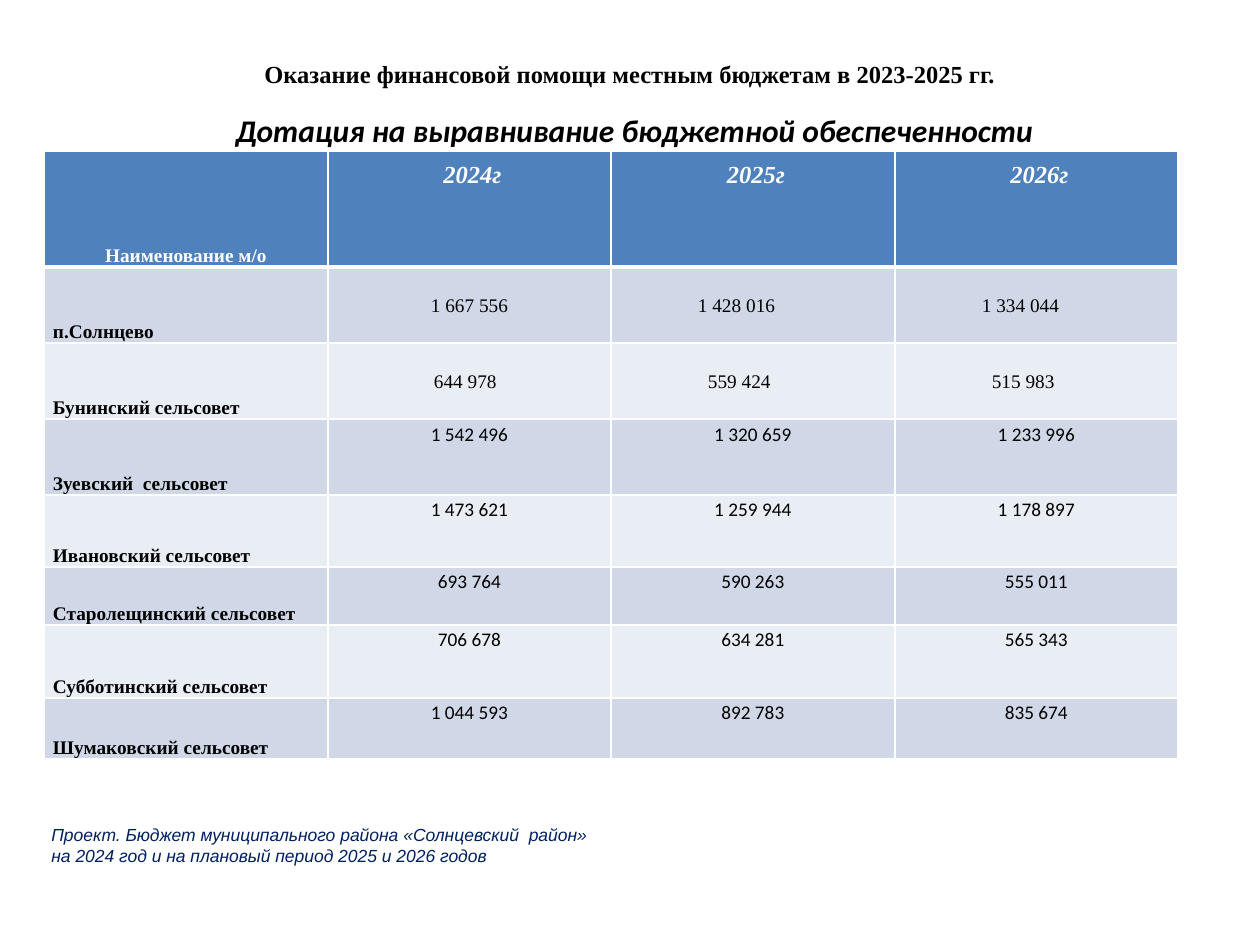
from lxml.etree import SubElement as Sub
from pptx import Presentation
from pptx.dml.color import RGBColor as Rgb
from pptx.enum.text import MSO_ANCHOR as Anchor, MSO_AUTO_SIZE as Auto, PP_ALIGN as Align
from pptx.oxml.ns import qn
from pptx.util import Pt

PX = 914400 // 126
SERIF, SANS, ARIAL = "Times New Roman", "Calibri", "Arial"
COLORS = {"white": "FFFFFF", "black": "000000", "navy": "002060",
          "head": "4F81BD", "odd": "D0D8E8", "even": "E9EDF4"}

# Content
TITLE = "Оказание финансовой помощи местным бюджетам в 2023-2025 гг."
SUB = "Дотация на выравнивание бюджетной обеспеченности"
NOTE = ["Проект. Бюджет муниципального района «Солнцевский  район»",
        "на 2024 год и на плановый период 2025 и 2026 годов"]
HEAD = ["Наименование м/о", " 2024г", " 2025г", " 2026г"]
ROWS = [
    ["п.Солнцево", "1 667 556", "1 428 016", "1 334 044"],
    ["Бунинский сельсовет", "644 978", "559 424", "515 983"],
    ["Зуевский  сельсовет", "1 542 496", "1 320 659", "1 233 996"],
    ["Ивановский сельсовет", "1 473 621", "1 259 944", "1 178 897"],
    ["Старолещинский сельсовет", "693 764", "590 263", "555 011"],
    ["Субботинский сельсовет", "706 678", "634 281", "565 343"],
    ["Шумаковский сельсовет", "1 044 593", "892 783", "835 674"],
]
WIDTHS = [284, 283, 284, 283]
HEIGHTS = [116, 76, 76, 76, 72, 58, 73, 61]
# Left insets of the values in the serif rows; None means centred
INSETS = {1: [None, 87, 87], 2: [106, 97, 97]}


def color(name):
    return Rgb.from_string(COLORS[name])


def write(para, text, size, font, tint, bold=False, italic=False, align=Align.LEFT):
    para.alignment = align
    run = para.add_run()
    run.text = text
    face = run.font
    face.size, face.name, face.bold, face.italic = Pt(size), font, bold, italic
    face.color.rgb = color(tint)


def place(shape, *box):
    shape.left, shape.top, shape.width, shape.height = [n * PX for n in box]


def add_box(slide, lines, box, *style, **look):
    shape = slide.shapes.add_textbox(*[n * PX for n in box])
    frame = shape.text_frame
    frame.word_wrap, frame.auto_size = True, Auto.SHAPE_TO_FIT_TEXT
    for n, line in enumerate(lines):
        para = frame.add_paragraph() if n else frame.paragraphs[0]
        write(para, line, *style, **look)


def pad(cell, left=9, top=0, right=9, bottom=0):
    cell.margin_left, cell.margin_top = left * PX, top * PX
    cell.margin_right, cell.margin_bottom = right * PX, bottom * PX


def paint(cell, row):
    cell.fill.solid()
    cell.fill.fore_color.rgb = color("head" if row == 0 else "odd" if row % 2 else "even")
    props = cell._tc.get_or_add_tcPr()
    for n, side in enumerate(["lnL", "lnR", "lnT", "lnB"]):
        thick = 3 if (row, side) in [(0, "lnB"), (1, "lnT")] else 1
        line = props.makeelement(qn("a:" + side), {"w": str(Pt(thick))})
        Sub(Sub(line, qn("a:solidFill")), qn("a:srgbClr"), val=COLORS["white"])
        props.insert(n, line)


def fill_cell(cell, row, col, text):
    para = cell.text_frame.paragraphs[0]
    para.line_spacing = 1.15
    if col == 0:
        pad(cell)
        cell.vertical_anchor = Anchor.BOTTOM
        write(para, text, 11, SERIF, "black" if row else "white", bold=True,
              align=Align.LEFT if row else Align.CENTER)
    elif row == 0:
        write(para, text, 14, SERIF, "white", bold=True, italic=True, align=Align.CENTER)
    elif row in INSETS:
        left = INSETS[row][col - 1]
        pad(cell, left=left or 9, top=25)
        write(para, text, 11, SERIF, "black", align=Align.LEFT if left else Align.CENTER)
    else:
        pad(cell)
        write(para, text, 11, SANS, "black", align=Align.CENTER)
    paint(cell, row)


def main():
    deck = Presentation()
    deck.slide_width, deck.slide_height = 1260 * PX, 945 * PX
    slide = deck.slides.add_slide(deck.slide_layouts[5])

    # Title
    title = slide.shapes.title
    place(title, 63, 38, 1134, 71)
    title.text_frame.vertical_anchor = Anchor.MIDDLE
    write(title.text_frame.paragraphs[0], TITLE, 14, SERIF, "black", bold=True,
          align=Align.CENTER)

    # Table of grants
    grid = [HEAD] + ROWS
    table = slide.shapes.add_table(len(grid), len(HEAD), 44 * PX, 151 * PX,
                                   sum(WIDTHS) * PX, sum(HEIGHTS) * PX).table
    for col, width in zip(table.columns, WIDTHS):
        col.width = width * PX
    for r, (line, height) in enumerate(zip(grid, HEIGHTS)):
        table.rows[r].height = height * PX
        for c, text in enumerate(line):
            fill_cell(table.cell(r, c), r, c, text)

    # Subtitle and footer
    add_box(slide, [SUB], (66, 105, 1137, 50), 18, SANS, "black",
            bold=True, italic=True, align=Align.CENTER)
    add_box(slide, NOTE, (39, 818, 979, 55), 10, ARIAL, "navy", italic=True)

    deck.save("out.pptx")


if __name__ == "__main__":
    main()
